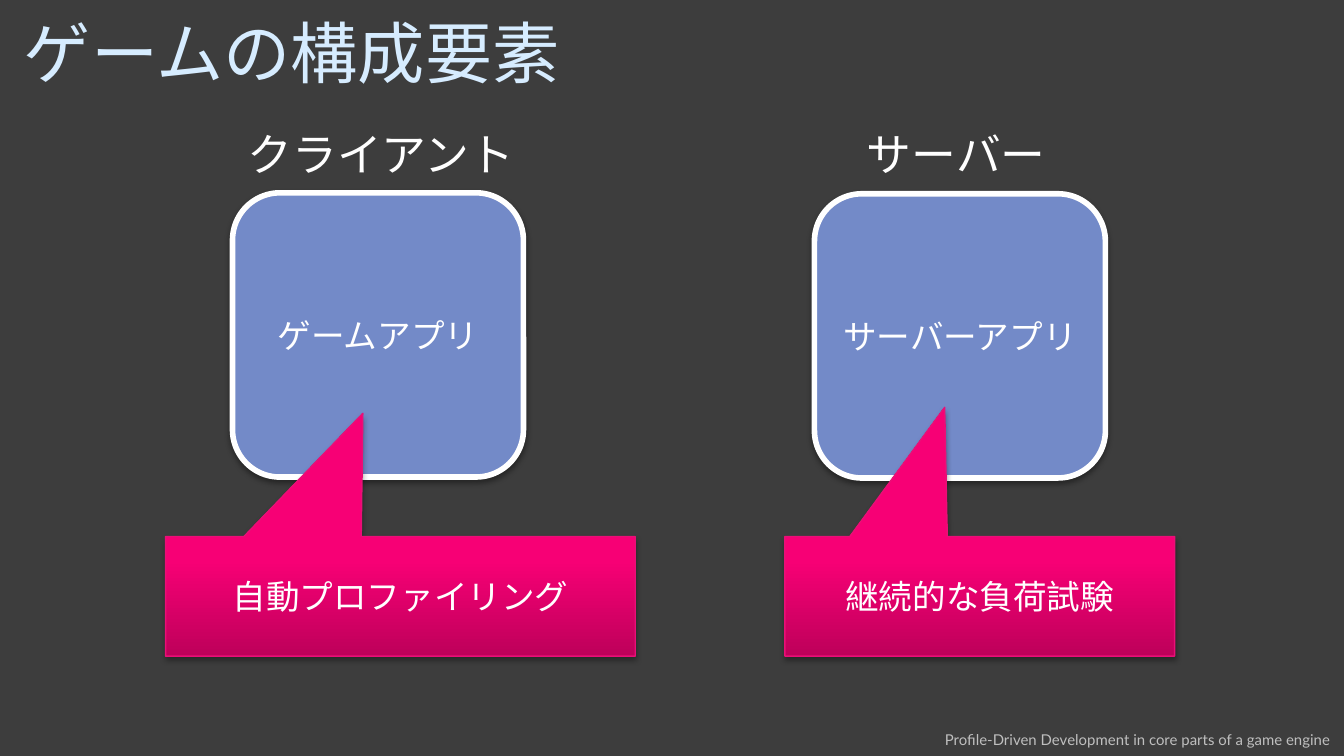
from lxml import etree
from pptx import Presentation
from pptx import util as u
from pptx.dml.color import RGBColor
from pptx.enum import shapes, text
from pptx.oxml import parse_xml
from pptx.oxml.ns import nsdecls, qn

C = {"bg": "3D3D3D", "title": "D6ECFF", "white": "FFFFFF", "footer": "BFBFBF",
     "app": "738AC8", "edge": "EA0F77", "dark": "BE005A", "mid": "F70075",
     "light": "F80076", "shadow": "000000"}

prs = Presentation()
prs.slide_width = u.Inches(10)
prs.slide_height = prs.slide_width * 9 // 16
COL = ROW = prs.slide_width / 100
s = prs.slides.add_slide(prs.slide_layouts[6])
s.background.fill.solid()
s.background.fill.fore_color.rgb = RGBColor.from_string(C["bg"])


def put(kind, box, words, size, font, color, align, anchor):
    at = [round(v * g) for v, g in zip(box, (COL, ROW, COL, ROW))]
    sp = s.shapes.add_shape(kind, *at) if kind else s.shapes.add_textbox(*at)
    tf = sp.text_frame
    tf.word_wrap = True
    tf.vertical_anchor = anchor
    p = tf.paragraphs[0]
    p.alignment = align
    r = p.add_run()
    r.text = words
    r.font.size, r.font.name = u.Pt(size), font
    r.font.color.rgb = RGBColor.from_string(C[color])
    return sp


def decorate(sp, line, width, alpha, dist):
    sp.line.color.rgb = RGBColor.from_string(C[line])
    sp.line.width = u.Pt(width)
    sp.shadow.inherit = False
    fx = sp._element.spPr.find(qn("a:effectLst"))
    shadow = etree.SubElement(fx, qn("a:outerShdw"), blurRad=str(u.Pt(3.1)),
                              dist=str(u.Pt(dist)), dir="5400000", rotWithShape="0")
    clr = etree.SubElement(shadow, qn("a:srgbClr"), val=C["shadow"])
    etree.SubElement(clr, qn("a:alpha"), val=str(alpha * 1000))


AL, AN, SH = text.PP_ALIGN, text.MSO_ANCHOR, shapes.MSO_SHAPE

put(None, (61.8, 53.9, 38.2, 2.4), "Profile-Driven Development in core parts of a game engine",
    8, "Lato", "footer", AL.RIGHT, AN.TOP)
put(None, (0.8, 0.55, 97.9, 6.6), "ゲームの構成要素", 36, "Calibri", "title", AL.LEFT, AN.MIDDLE)

for x, y, words in ((17.3, 14.35, "ゲームアプリ"), (60.6, 14.42, "サーバーアプリ")):
    sp = put(SH.ROUNDED_RECTANGLE, (x, y, 21.65, 21.15), words, 18, "Calibri", "white",
             AL.CENTER, AN.MIDDLE)
    sp.fill.solid()
    sp.fill.fore_color.rgb = RGBColor.from_string(C["app"])
    decorate(sp, "white", 3, 38, 1.6)

for x, words in ((17.3, "クライアント"), (60.1, "サーバー")):
    put(None, (x, 8.95, 22.1, 5), words, 24, "Arial", "white", AL.CENTER, AN.TOP)

stops = "".join(f'<a:gs pos="{pos * 1000}"><a:srgbClr val="{C[c]}"/></a:gs>'
                for pos, c in ((0, "dark"), (80, "mid"), (100, "light")))
for x, w, tip, words in ((12.32, 34.95, (-0.08, -1.53), "自動プロファイリング"),
                         (58.4, 29, (-0.09, -1.58), "継続的な負荷試験")):
    sp = put(SH.RECTANGULAR_CALLOUT, (x, 39.92, w, 8.9), words, 18, "Calibri", "white",
             AL.CENTER, AN.MIDDLE)
    sp.adjustments[0], sp.adjustments[1] = tip
    sp.fill.gradient()
    spPr = sp._element.spPr
    spPr.replace(spPr.find(qn("a:gradFill")), parse_xml(
        f'<a:gradFill {nsdecls("a")} rotWithShape="1"><a:gsLst>{stops}</a:gsLst>'
        '<a:lin ang="16200000" scaled="0"/></a:gradFill>'))
    decorate(sp, "edge", 0.75, 35, 1.8)

prs.save("out.pptx")
